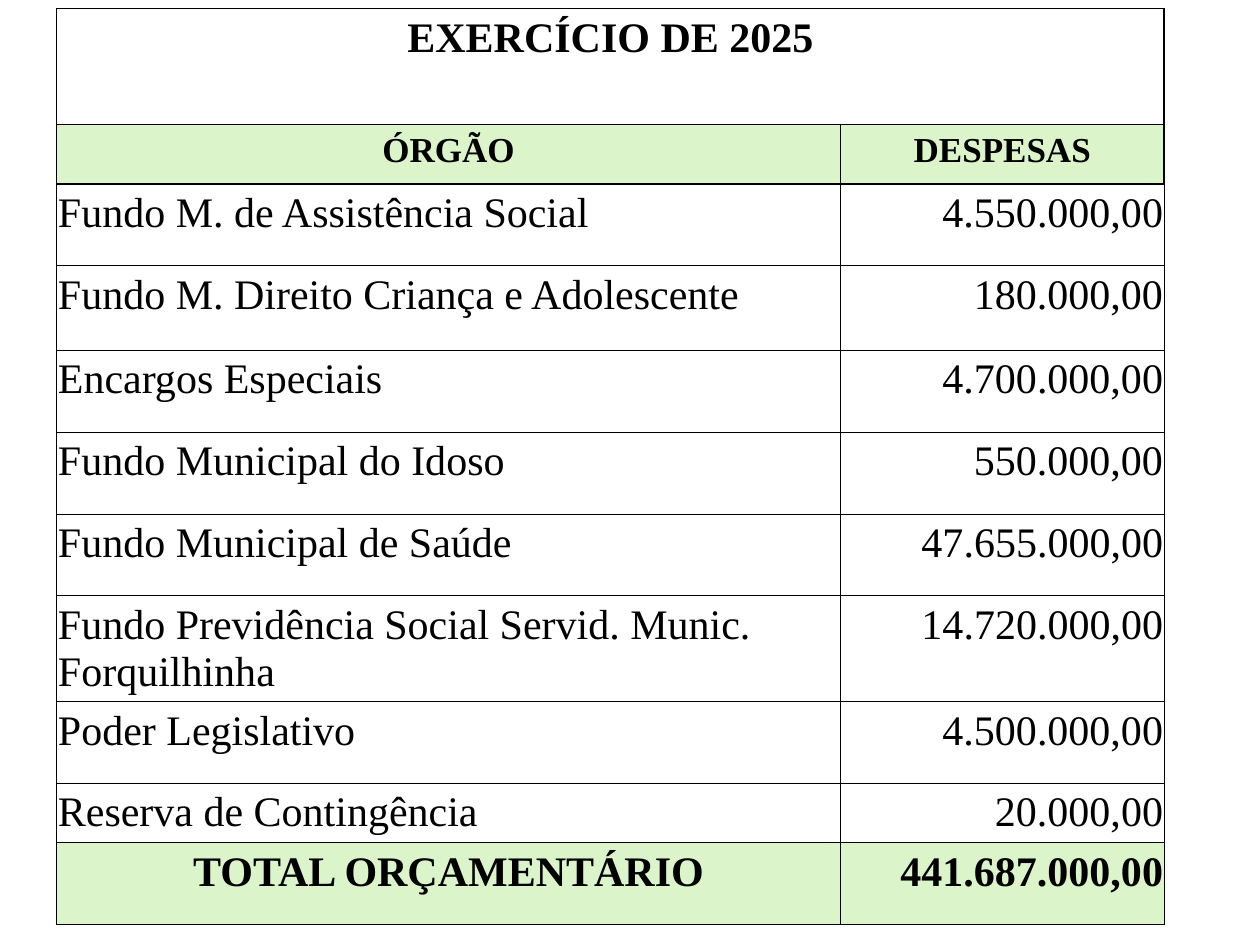
from lxml.etree import SubElement
from pptx import Presentation
from pptx.dml.color import RGBColor
from pptx.enum.text import PP_ALIGN
from pptx.oxml.ns import qn
from pptx.util import Inches, Pt

FONT = "Times New Roman"
BLACK = "000000"
GREEN = "DBF4CA"
THIN, THICK = 0.5, 0.96
COLUMNS = [6.22, 2.57]
ROW_HEIGHTS = [0.92, 0.47, 0.65, 0.67, 0.65, 0.65, 0.65, 0.76, 0.65, 0.47, 0.65]
EXPENSES = [
    ("Fundo M. de Assistência Social", "4.550.000,00"),
    ("Fundo M. Direito Criança e Adolescente", "180.000,00"),
    ("Encargos Especiais", "4.700.000,00"),
    ("Fundo Municipal do Idoso", "550.000,00"),
    ("Fundo Municipal de Saúde", "47.655.000,00"),
    ("Fundo Previdência Social Servid. Munic. Forquilhinha", "14.720.000,00"),
    ("Poder Legislativo", "4.500.000,00"),
    ("Reserva de Contingência", "20.000,00"),
]


def color(value):
    return RGBColor.from_string(value)


def set_borders(cell, widths):
    tc_pr = cell._tc.get_or_add_tcPr()
    for side, width in zip("LRTB", widths):
        ln = SubElement(tc_pr, qn(f"a:ln{side}"), w=str(Pt(width)))
        fill = SubElement(ln, qn("a:solidFill"))
        SubElement(fill, qn("a:srgbClr"), val=BLACK)


def fill_cell(cell, text, align, size=24, bold=False, fill=None):
    cell.margin_left = cell.margin_right = Inches(0.01)
    cell.margin_top = cell.margin_bottom = Inches(0.05)
    if fill:
        cell.fill.solid()
        cell.fill.fore_color.rgb = color(fill)
    else:
        cell.fill.background()
    p = cell.text_frame.paragraphs[0]
    p.alignment = align
    r = p.add_run()
    r.text = text
    r.font.name = FONT
    r.font.size = Pt(size)
    r.font.bold = bold
    r.font.color.rgb = color(BLACK)


def add_budget_table(s):
    shape = s.shapes.add_table(
        len(ROW_HEIGHTS), len(COLUMNS), Inches(0.45), Inches(0.07),
        Inches(sum(COLUMNS)), Inches(sum(ROW_HEIGHTS)))
    table = shape.table
    table.first_row = table.horz_banding = False
    for column, width in zip(table.columns, COLUMNS):
        column.width = Inches(width)
    for row, height in zip(table.rows, ROW_HEIGHTS):
        row.height = Inches(height)
    return table


def fill_row(table, index, texts, aligns, widths, **style):
    for cell, text, align in zip(table.rows[index].cells, texts, aligns):
        set_borders(cell, widths)
        fill_cell(cell, text, align, **style)


def main():
    prs = Presentation()
    prs.slide_width, prs.slide_height = Inches(10), Inches(7.5)
    s = prs.slides.add_slide(prs.slide_layouts[6])
    table = add_budget_table(s)

    title = table.cell(0, 0)
    title.merge(table.cell(0, 1))
    for cell in table.rows[0].cells:
        set_borders(cell, (THIN, THICK, THIN, THICK))
    fill_cell(title, "EXERCÍCIO DE 2025", PP_ALIGN.CENTER, bold=True)

    fill_row(table, 1, ("ÓRGÃO", "DESPESAS"), [PP_ALIGN.CENTER] * 2,
             [THICK] * 4, size=20, bold=True, fill=GREEN)
    for index, expense in enumerate(EXPENSES, start=2):
        top = THICK if index == 2 else THIN
        fill_row(table, index, expense, (PP_ALIGN.LEFT, PP_ALIGN.RIGHT),
                 (THIN, THIN, top, THIN))
    fill_row(table, len(ROW_HEIGHTS) - 1, ("TOTAL ORÇAMENTÁRIO", "441.687.000,00"),
             (PP_ALIGN.CENTER, PP_ALIGN.RIGHT), [THIN] * 4, bold=True, fill=GREEN)

    prs.save("out.pptx")


if __name__ == "__main__":
    main()
